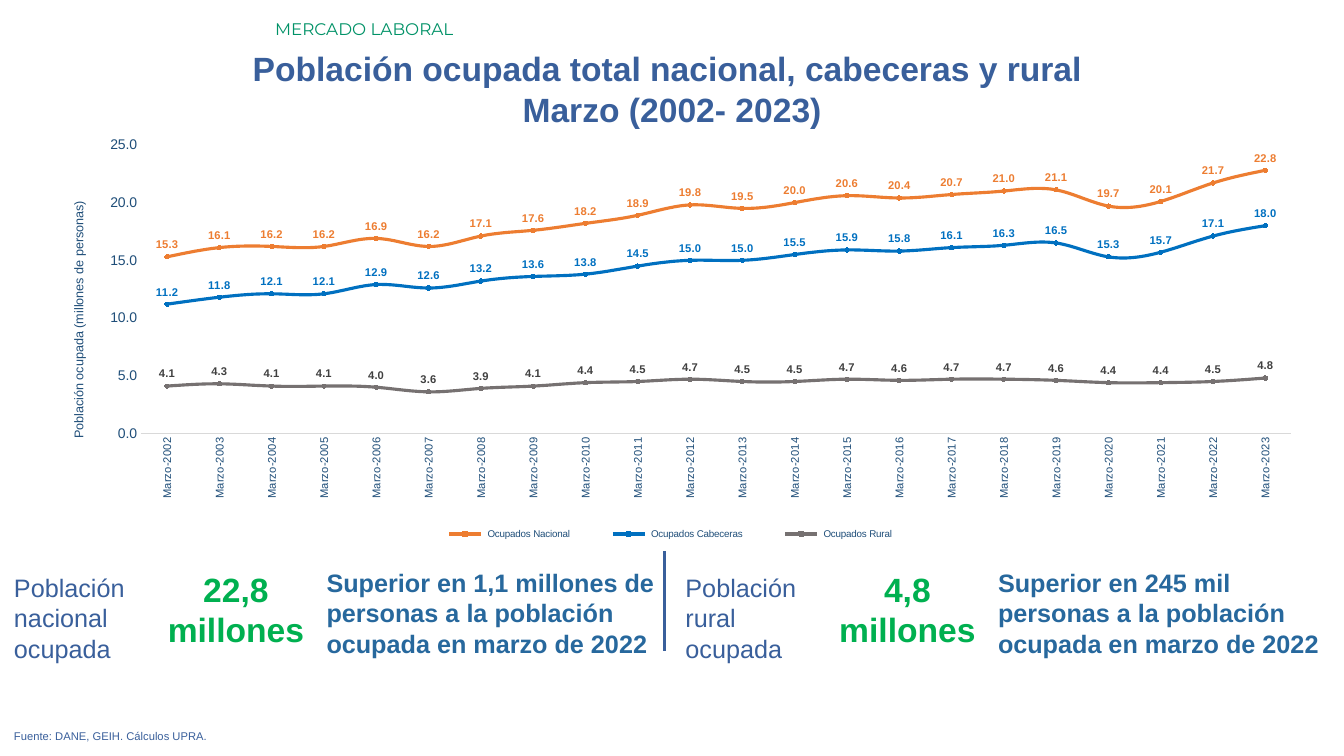
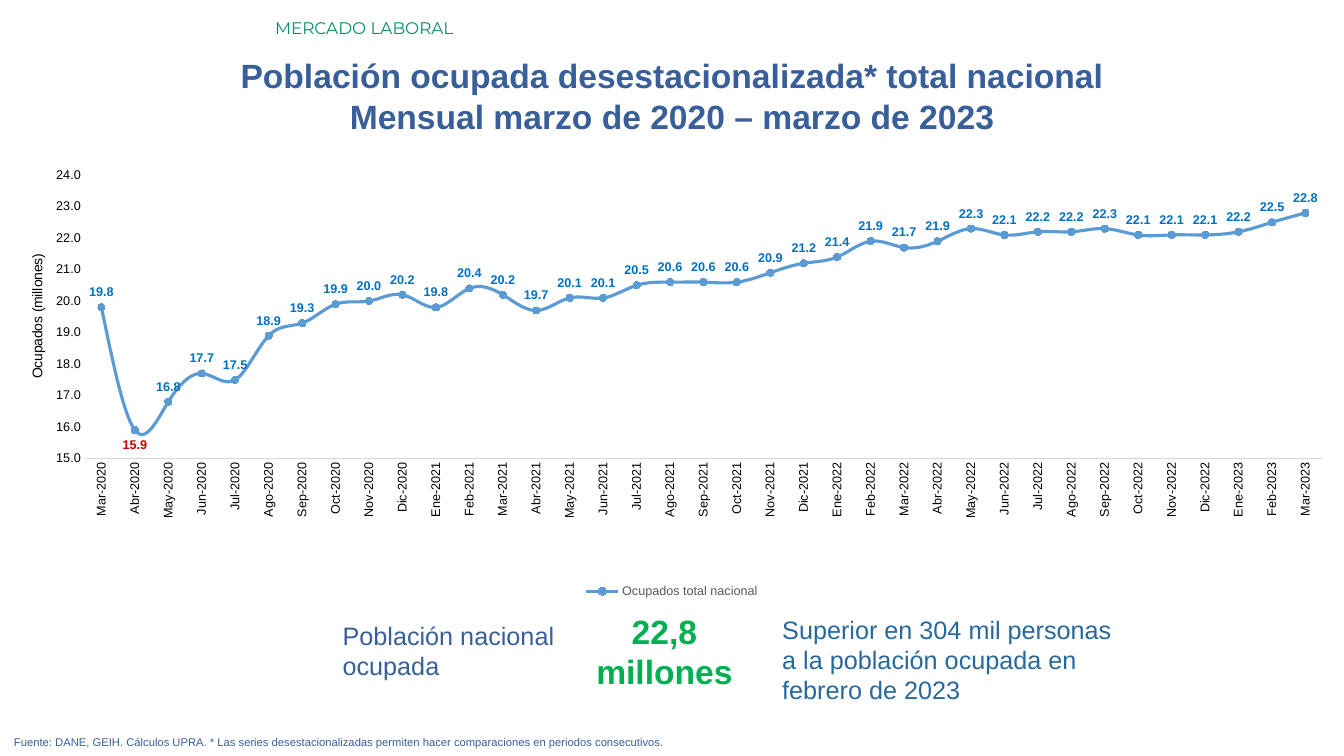
from lxml import etree
from pptx import Presentation
from pptx.chart.data import CategoryChartData
from pptx.dml.color import RGBColor
from pptx.enum import chart as chart_enum, shapes, text
from pptx.oxml import ns
from pptx.util import Inches, Pt

BLUE, TEAL, GREEN, BRAND = "395F9B", "27689D", "00B050", "009267"
NAVY, BLACK, AXIS_GREY, LEGEND_GREY = "1F4E79", "000000", "D9D9D9", "595959"
SLIDE_WIDTH, SLIDE_HEIGHT = 13.33, 7.5
ALIGN = text.PP_ALIGN
MONTHS = "Ene Feb Mar Abr May Jun Jul Ago Sep Oct Nov Dic".split()


def color(hex_value):
    return RGBColor.from_string(hex_value)


def set_font(font, size, hex_value, bold=False, name="Arial"):
    font.name, font.size, font.bold = name, Pt(size), bold
    font.color.rgb = color(hex_value)


def add_text(slide, box, lines, size, hex_value, bold=False,
             align=ALIGN.LEFT, name="Arial"):
    shape = slide.shapes.add_textbox(*map(Inches, box))
    frame = shape.text_frame
    frame.word_wrap = True
    frame.text = lines
    for paragraph in frame.paragraphs:
        paragraph.alignment = align
        for run in paragraph.runs:
            set_font(run.font, size, hex_value, bold, name)


# Shared frame: section name, title, source
def add_frame(slide, title, source, section_top, title_top, source_top):
    add_text(slide, (2.63, section_top, 10.7, 0.3), "MERCADO LABORAL", 12,
             BRAND, name="Montserrat")
    add_text(slide, (0, title_top, SLIDE_WIDTH, 0.91), title, 24, BLUE, True,
             ALIGN.CENTER)
    add_text(slide, (0.04, source_top, 12.91, 0.24), source, 8, BLUE,
             align=ALIGN.JUSTIFY)


# Indicator: what is measured, its figure and the comparison
def add_indicator(slide, left, top, label, figure, comparison, label_width,
                  figure_left, comparison_left, label_drop, comparison_drop,
                  bold):
    add_text(slide, (left, top + label_drop, label_width, 1.01), label, 18,
             BLUE)
    add_text(slide, (left + figure_left, top, 1.7, 0.91), figure, 24, GREEN,
             True, ALIGN.CENTER)
    add_text(slide, (left + comparison_left, top + comparison_drop, 3.51, 1.01),
             comparison, 18, TEAL, bold)


# Chart parts
def set_layout(element, index, x, y, width=None, height=None, inner=False):
    layout = element.find(ns.qn("c:layout"))
    if layout is None:
        layout = etree.Element(ns.qn("c:layout"))
        element.insert(index, layout)
    manual = etree.SubElement(layout, ns.qn("c:manualLayout"))
    entries = [("layoutTarget", "inner")] if inner else []
    entries += [("xMode", "edge"), ("yMode", "edge"), ("x", x), ("y", y)]
    if width is not None:
        entries += [("w", width), ("h", height)]
    for tag, value in entries:
        etree.SubElement(manual, ns.qn("c:" + tag)).set("val", str(value))


def turn_text(element):
    body = next(element.iter(ns.qn("a:bodyPr")))
    body.set("rot", "-5400000")
    body.set("vert", "horz")


def style_category_axis(axis, size, hex_value):
    axis.major_tick_mark = chart_enum.XL_TICK_MARK.NONE
    axis.format.line.color.rgb = color(AXIS_GREY)
    axis.format.line.width = Pt(0.75)
    set_font(axis.tick_labels.font, size, hex_value)
    turn_text(axis.tick_labels.font and axis._element.find(ns.qn("c:txPr")))


def style_value_axis(axis, scale, size, hex_value, title, title_size, title_at):
    axis.minimum_scale, axis.maximum_scale, axis.major_unit = scale
    axis.has_major_gridlines = False
    axis.major_tick_mark = chart_enum.XL_TICK_MARK.NONE
    axis.format.line.fill.background()
    axis.tick_labels.number_format = "0.0"
    axis.tick_labels.number_format_is_linked = False
    set_font(axis.tick_labels.font, size, hex_value)
    axis_title = axis.axis_title
    axis_title.text_frame.text = title
    run = axis_title.text_frame.paragraphs[0].runs[0]
    set_font(run.font, title_size, hex_value)
    turn_text(axis_title._element)
    set_layout(axis_title._element, 1, *title_at)


def style_series(series, hex_value, marker_size, label_size, label_color):
    series.smooth = True
    series.format.line.color.rgb = color(hex_value)
    series.format.line.width = Pt(2.25)
    marker = series.marker
    marker.style = chart_enum.XL_MARKER_STYLE.CIRCLE
    marker.size = marker_size
    marker.format.fill.solid()
    marker.format.fill.fore_color.rgb = color(hex_value)
    marker.format.line.color.rgb = color(hex_value)
    labels = series.data_labels
    labels.show_value = True
    labels.number_format = "0.0"
    labels.number_format_is_linked = False
    labels.position = chart_enum.XL_LABEL_POSITION.ABOVE
    set_font(labels.font, label_size, label_color, True)


def add_line_chart(slide, box, categories, series_rows, plot_box, marker_size,
                   label_size, category_size, legend_size, legend_color,
                   hex_value, value_axis, legend_box=None):
    data = CategoryChartData(number_format="0.0")
    data.categories = categories
    for name, values, *_ in series_rows:
        data.add_series(name, values)
    chart = slide.shapes.add_chart(chart_enum.XL_CHART_TYPE.LINE_MARKERS,
                                   *map(Inches, box), data).chart
    chart.has_title = False
    set_font(chart.font, label_size, hex_value)
    plot = chart.plots[0]
    plot.vary_by_categories = False
    for series, (_, _, line_color, label_color) in zip(plot.series, series_rows):
        style_series(series, line_color, marker_size, label_size, label_color)
    style_category_axis(chart.category_axis, category_size, hex_value)
    style_value_axis(chart.value_axis, hex_value=hex_value, **value_axis)
    chart.has_legend = True
    chart.legend.position = chart_enum.XL_LEGEND_POSITION.BOTTOM
    chart.legend.include_in_layout = False
    set_font(chart.legend.font, legend_size, legend_color)
    if legend_box:
        set_layout(chart.legend._element, 1, *legend_box)
    plot_area = chart._chartSpace.find(".//" + ns.qn("c:plotArea"))
    set_layout(plot_area, 0, *plot_box, inner=True)
    return chart


# Slide 1: yearly series by area
def build_yearly_slide(slide):
    add_frame(slide,
              "Población ocupada total nacional, cabeceras y rural \n"
              "Marzo (2002- 2023)",
              "Fuente: DANE, GEIH. Cálculos UPRA.", 0.14, 0.43, 7.19)
    national = [15.3, 16.1, 16.2, 16.2, 16.9, 16.2, 17.1, 17.6, 18.2, 18.9, 19.8,
                19.5, 20, 20.6, 20.4, 20.7, 21, 21.1, 19.7, 20.1, 21.7, 22.8]
    urban = [11.2, 11.8, 12.1, 12.1, 12.9, 12.6, 13.2, 13.6, 13.8, 14.5, 15,
             15, 15.5, 15.9, 15.8, 16.1, 16.3, 16.5, 15.3, 15.7, 17.1, 18]
    rural = [4.1, 4.3, 4.1, 4.1, 4, 3.6, 3.9, 4.1, 4.4, 4.5, 4.7,
             4.5, 4.5, 4.7, 4.6, 4.7, 4.7, 4.6, 4.4, 4.4, 4.5, 4.8]
    add_line_chart(
        slide, (0.21, 1.36, 12.91, 4.06),
        [f"Marzo-{year}" for year in range(2002, 2024)],
        [(" Ocupados Nacional ", national, "ED7D31", "ED7D31"),
         (" Ocupados Cabeceras ", urban, "0070C0", "0070C0"),
         (" Ocupados Rural ", rural, "767171", "404040")],
        plot_box=(0.092, 0.018, 0.884, 0.706), marker_size=3, label_size=8,
        category_size=8, legend_size=7, legend_color=NAVY, hex_value=NAVY,
        value_axis=dict(scale=(0, 25, 5), size=10, title_size=9,
                        title="Población ocupada (millones de personas)",
                        title_at=(0.036, 0.15)),
        legend_box=(0.3, 0.94, 0.4, 0.06))

    indicators = [
        (0.04, "Población nacional\nocupada", "22,8 millones",
         "Superior en 1,1 millones de personas a la población ocupada en marzo "
         "de 2022"),
        (6.7, "Población rural\nocupada", "4,8 millones",
         "Superior en 245 mil personas a la población ocupada en marzo de 2022"),
    ]
    for left, label, figure, comparison in indicators:
        add_indicator(slide, left, 5.59, label, figure, comparison,
                      label_width=1.61, figure_left=1.45, comparison_left=3.1,
                      label_drop=0.04, comparison_drop=-0.01, bold=True)

    divider = slide.shapes.add_connector(
        shapes.MSO_CONNECTOR.STRAIGHT, Inches(6.59), Inches(5.47),
        Inches(6.59), Inches(6.46))
    divider.line.color.rgb = color(BLUE)
    divider.line.width = Pt(2.25)
    etree.SubElement(divider._element.spPr, ns.qn("a:effectLst"))


# Slide 2: monthly seasonally adjusted series
def build_monthly_slide(slide):
    add_frame(slide,
              "Población ocupada desestacionalizada* total nacional\n"
              "Mensual marzo de 2020 – marzo de 2023",
              "Fuente: DANE, GEIH. Cálculos UPRA. * Las series "
              "desestacionalizadas permiten hacer comparaciones en periodos "
              "consecutivos.", 0.13, 0.5, 7.25)
    employed = [19.8, 15.9, 16.8, 17.7, 17.5, 18.9, 19.3, 19.9, 20, 20.2,
                19.8, 20.4, 20.2, 19.7, 20.1, 20.1, 20.5, 20.6, 20.6, 20.6,
                20.9, 21.2, 21.4, 21.9, 21.7, 21.9, 22.3, 22.1, 22.2, 22.2,
                22.3, 22.1, 22.1, 22.1, 22.2, 22.5, 22.8]
    first_month = MONTHS.index("Mar")
    categories = [f"{MONTHS[month % 12]}-{2020 + month // 12}"
                  for month in range(first_month, first_month + len(employed))]
    chart = add_line_chart(
        slide, (0.15, 1.51, 13.03, 4.47), categories,
        [("Ocupados total nacional", employed, "5B9BD5", "0070C0")],
        plot_box=(0.053, 0.051, 0.942, 0.629), marker_size=5, label_size=9,
        category_size=9, legend_size=9, legend_color=LEGEND_GREY,
        hex_value=BLACK,
        value_axis=dict(scale=(15, 24, 1), size=9, title_size=10,
                        title="Ocupados (millones)", title_at=(0.008, 0.22)))
    lowest = employed.index(min(employed))
    label = chart.plots[0].series[0].points[lowest].data_label
    set_font(label.font, 9, "C00000", True)
    label.position = chart_enum.XL_LABEL_POSITION.BELOW

    add_indicator(slide, 3.3, 6.01, "Población nacional\nocupada",
                  "22,8 millones",
                  "Superior en 304 mil personas a la población ocupada en "
                  "febrero de 2023",
                  label_width=2.53, figure_left=2.44, comparison_left=4.36,
                  label_drop=0.09, comparison_drop=0.03, bold=False)


def main():
    presentation = Presentation()
    presentation.slide_width = Inches(SLIDE_WIDTH)
    presentation.slide_height = Inches(SLIDE_HEIGHT)
    for build in (build_yearly_slide, build_monthly_slide):
        build(presentation.slides.add_slide(presentation.slide_layouts[6]))
    presentation.save("out.pptx")


if __name__ == "__main__":
    main()
